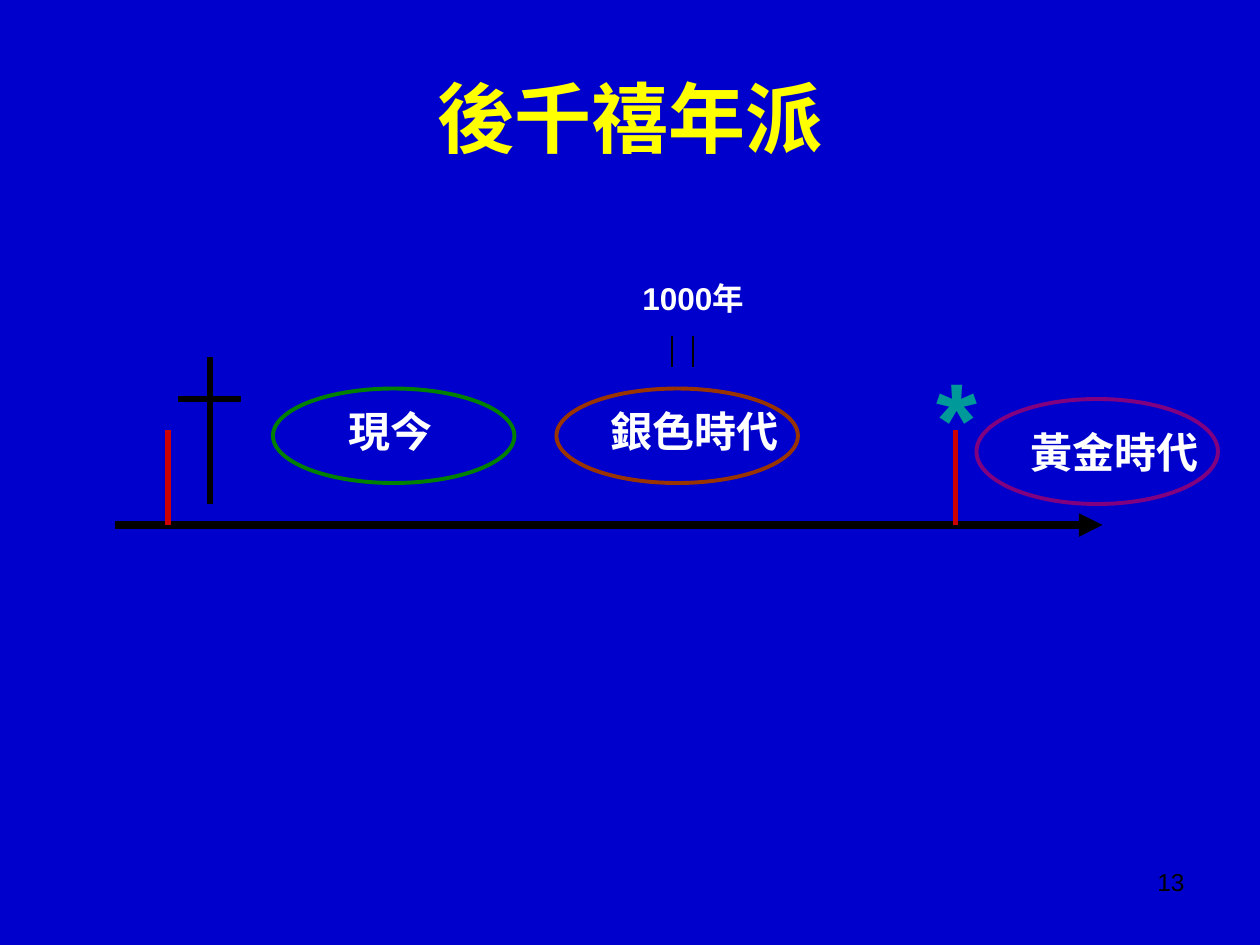
from pptx import Presentation
from pptx.dml.color import RGBColor
from pptx.enum.shapes import MSO_CONNECTOR as Connector, MSO_SHAPE as Shape
from pptx.enum.text import MSO_ANCHOR as Anchor, MSO_AUTO_SIZE as AutoSize, PP_ALIGN as Align
from pptx.oxml.ns import qn
from pptx.util import Inches, Pt
from lxml.etree import SubElement

BLUE = RGBColor(0x00, 0x00, 0xCC)
YELLOW = RGBColor(0xFF, 0xFF, 0x00)
BLACK = RGBColor(0x00, 0x00, 0x00)
WHITE = RGBColor(0xFF, 0xFF, 0xFF)
RED = RGBColor(0xCC, 0x00, 0x00)
TEAL = RGBColor(0x00, 0x99, 0x99)
GREEN = RGBColor(0x00, 0x80, 0x00)
BROWN = RGBColor(0x99, 0x33, 0x00)
PURPLE = RGBColor(0x80, 0x00, 0x80)

CELLS_PER_INCH = 12
COLUMNS, ROWS = 120, 90
AXIS_ROW = 50


def cells(*counts):
    """Turn grid counts into lengths."""
    return [Inches(count / CELLS_PER_INCH) for count in counts]


def add_text(page, area, text, size, color, bold=True, align=Align.LEFT, **frame_format):
    box = page.shapes.add_textbox(*cells(*area))
    frame = box.text_frame
    frame_values = {"auto_size": AutoSize.NONE, "word_wrap": True,
                    "vertical_anchor": Anchor.TOP, **frame_format}
    for name, value in frame_values.items():
        setattr(frame, name, value)
    para = frame.paragraphs[0]
    para.alignment = align
    span = para.add_run()
    span.text = text
    for name, value in {"name": "Arial", "size": Pt(size), "bold": bold}.items():
        setattr(span.font, name, value)
    span.font.color.rgb = color


def add_line(page, start, end, color, width, arrow=False):
    line = page.shapes.add_connector(Connector.STRAIGHT, *cells(*start, *end))
    line.line.color.rgb = color
    line.line.width = Pt(width)
    if arrow:
        SubElement(line.line._get_or_add_ln(), qn("a:tailEnd"), type="triangle")
    SubElement(line._element.spPr, qn("a:effectLst"))


def add_ring(page, area, color):
    ring = page.shapes.add_shape(Shape.OVAL, *cells(*area))
    ring.shadow.inherit = False
    ring.fill.background()
    ring.line.color.rgb = color
    ring.line.width = Pt(2.25)


def add_era(page, text, text_area, ring_area, color):
    add_text(page, text_area, text, 24, WHITE, word_wrap=False)
    add_ring(page, ring_area, color)


def add_timeline(page):
    add_line(page, (11, AXIS_ROW), (105, AXIS_ROW), BLACK, 4.5, arrow=True)
    for column in (16, 91):
        add_line(page, (column, AXIS_ROW - 9), (column, AXIS_ROW), RED, 3)
    add_text(page, (88, 33, 6.4, 13.2), "*", 60, TEAL, word_wrap=False)


def add_cross(page):
    add_line(page, (20, 34), (20, 48), BLACK, 3)
    add_line(page, (17, 38), (23, 38), BLACK, 3)


def main():
    deck = Presentation()
    deck.slide_width, deck.slide_height = cells(COLUMNS, ROWS)
    page = deck.slides.add_slide(deck.slide_layouts[6])
    page.background.fill.solid()
    page.background.fill.fore_color.rgb = BLUE

    add_text(page, (6, 3.6, COLUMNS - 12, 15), "後千禧年派", 44, YELLOW,
             align=Align.CENTER, vertical_anchor=Anchor.MIDDLE)
    add_timeline(page)
    add_cross(page)
    eras = [
        ("現今", (32, 38, 10.4, 6), (26, 37, 23, 9), GREEN),
        ("銀色時代", (57, 38, 18.4, 6), (53, 37, 23, 9), BROWN),
        ("黃金時代", (97, 40, 18.4, 6), (93, 38, 23, 10), PURPLE),
    ]
    for era in eras:
        add_era(page, *era)
    for column in (64, 66):
        add_line(page, (column, 35), (column, 32), BLACK, 0.75)
    add_text(page, (60, 26, 12.1, 4.8), "1000年", 18, WHITE)
    add_text(page, (86, 82, 28, 6.25), "13", 14, BLACK, bold=False, align=Align.RIGHT)
    deck.save("out.pptx")


if __name__ == "__main__":
    main()
